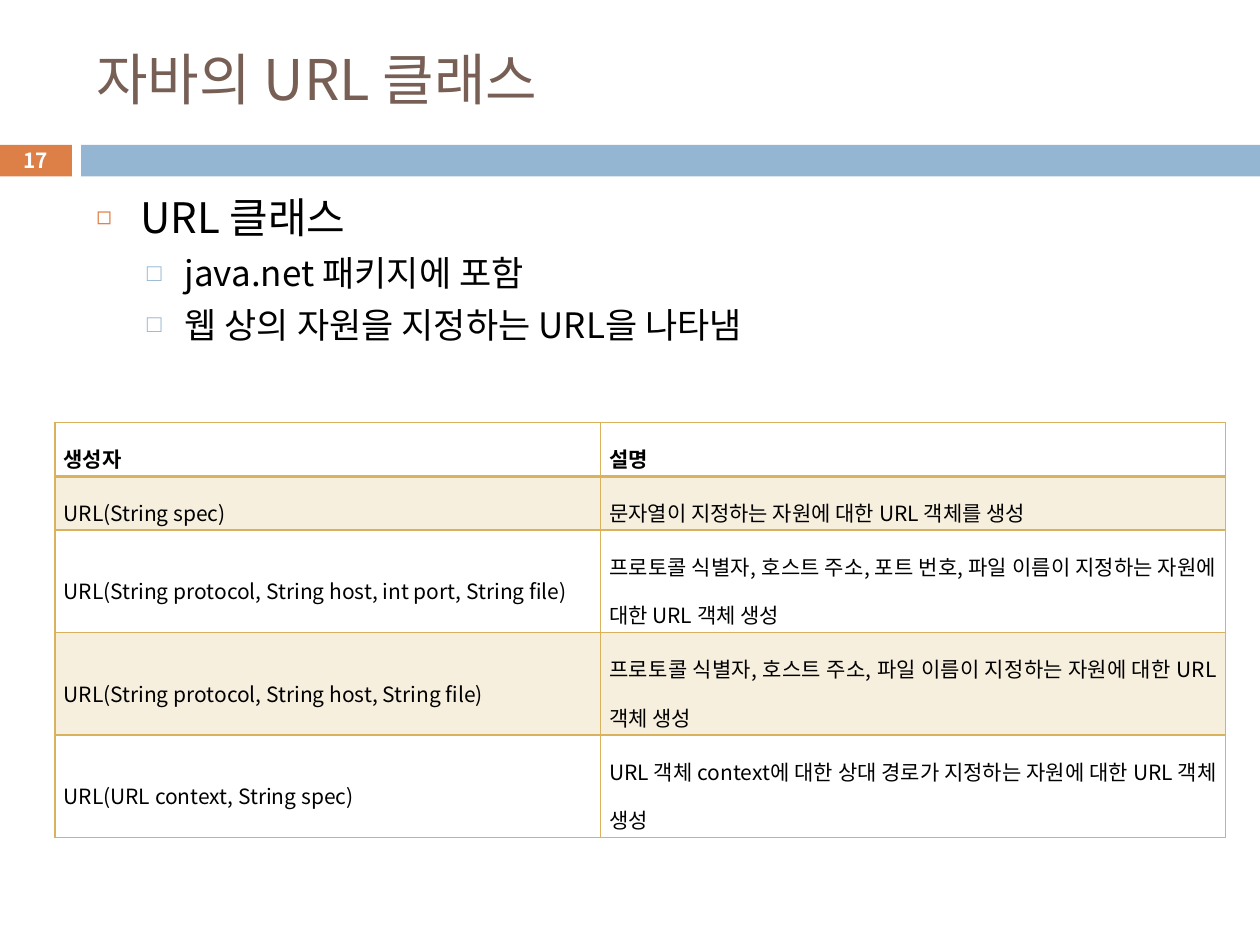
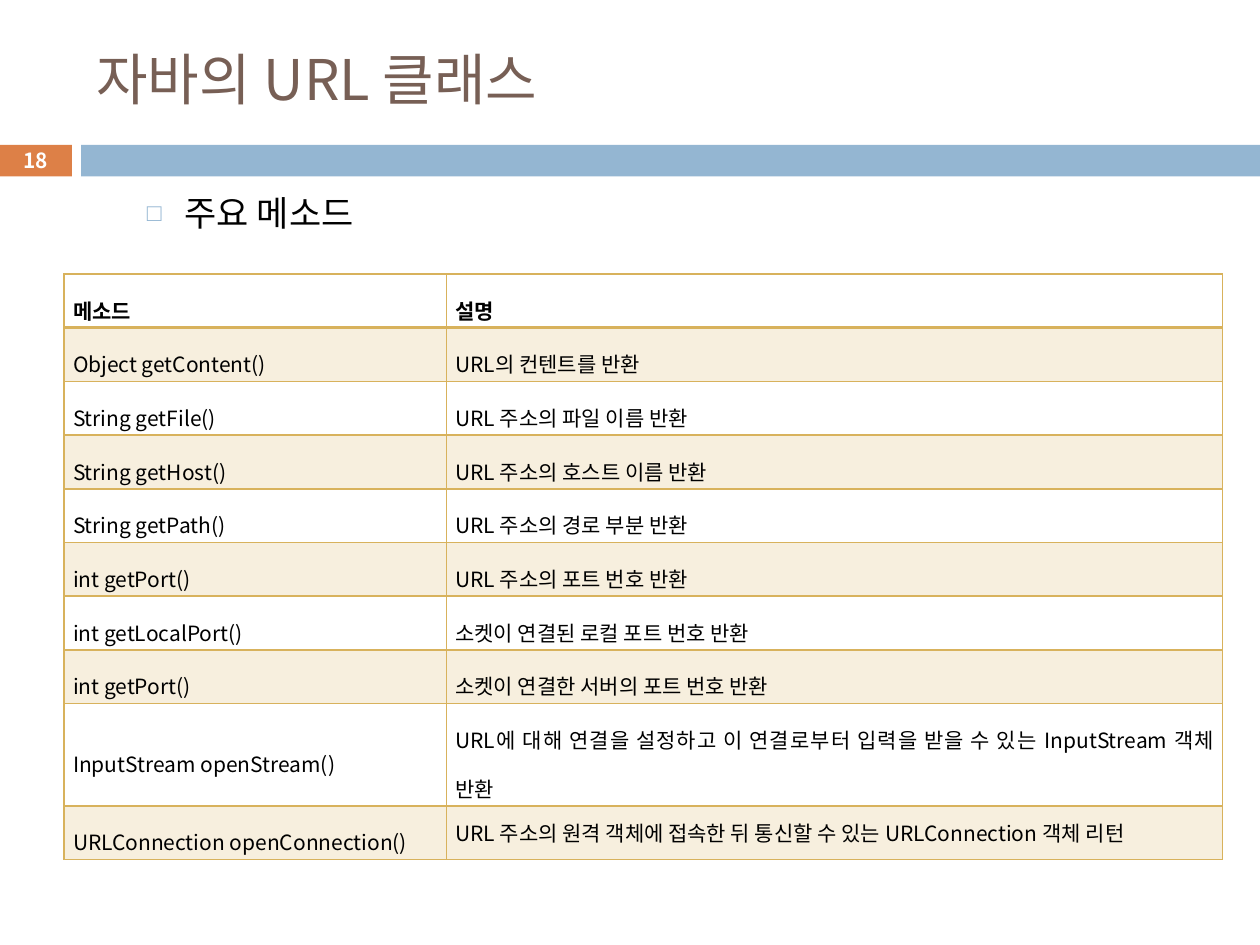
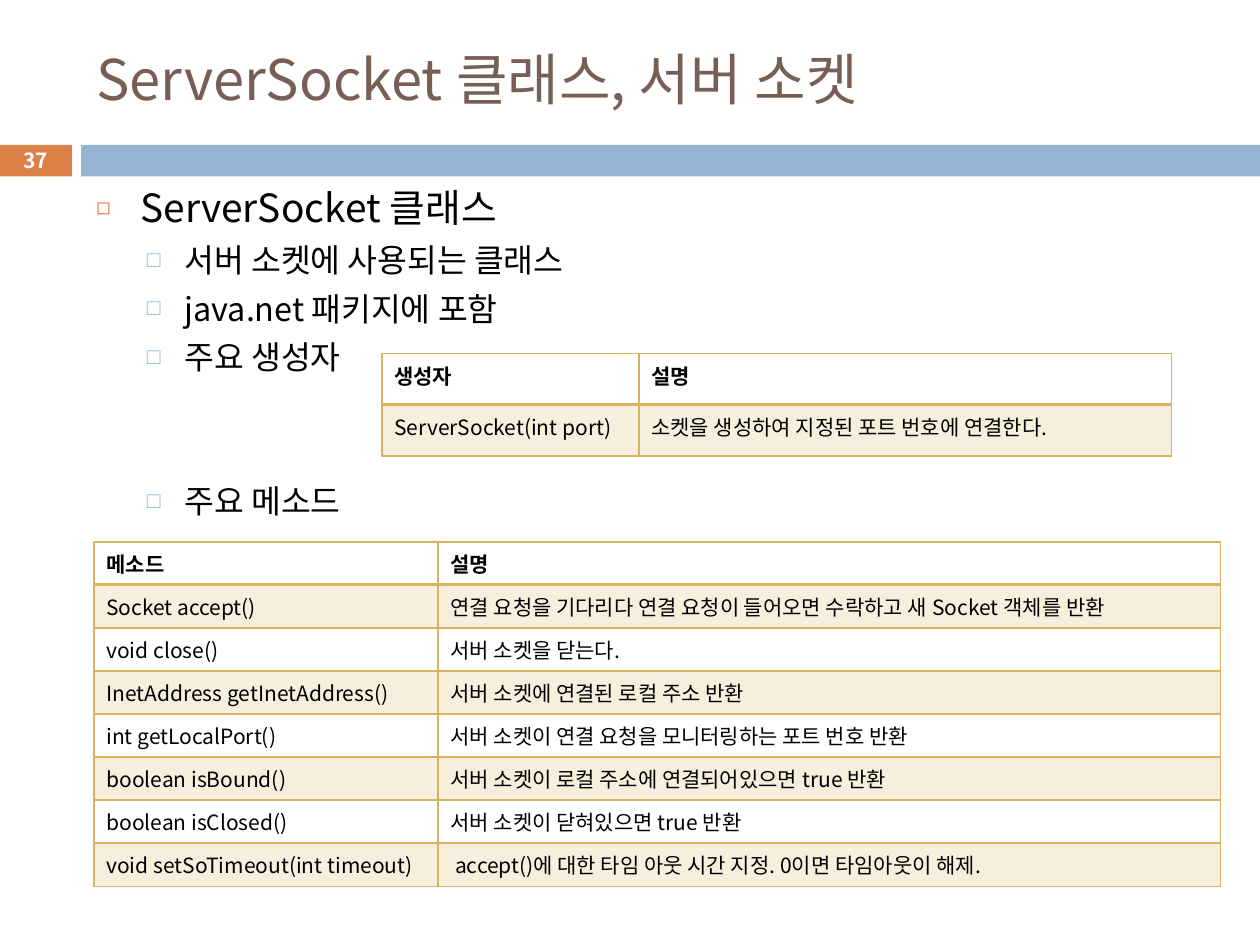
from lxml import etree
from pptx import Presentation
from pptx import util as u
from pptx.dml.color import RGBColor
from pptx.enum import shapes, text
from pptx.oxml.ns import qn

FONT = "Noto Sans CJK KR"
BROWN, ORANGE, BLUE, GOLD = "775F55", "DD8047", "94B6D2", "D8B25C"
BLACK, WHITE = "000000", "FFFFFF"
WIDTH, HEIGHT = u.Inches(10), u.Inches(7.5)
COLUMN, ROW = WIDTH / 100, HEIGHT / 75
ONE_LINE, TWO_LINES = 4.26, 8.13
BULLETS = [("◻", ORANGE, 60, 0.35, 0.35, 7), ("□", BLUE, 70, 0.7, 0.3, 5.5)]

URL_CONSTRUCTORS = [
    ("생성자", "설명"),
    ("URL(String spec)", "문자열이 지정하는 자원에 대한 URL 객체를 생성"),
    ("URL(String protocol, String host, int port, String file)",
     "프로토콜 식별자, 호스트 주소, 포트 번호, 파일 이름이 지정하는 자원에 대한 URL 객체 생성"),
    ("URL(String protocol, String host, String file)",
     "프로토콜 식별자, 호스트 주소, 파일 이름이 지정하는 자원에 대한 URL 객체 생성"),
    ("URL(URL context, String spec)",
     "URL 객체 context에 대한 상대 경로가 지정하는 자원에 대한 URL 객체 생성"),
]
URL_METHODS = [
    ("메소드", "설명"),
    ("Object getContent()", "URL의 컨텐트를 반환"),
    ("String getFile()", "URL 주소의 파일 이름 반환"),
    ("String getHost()", "URL 주소의 호스트 이름 반환"),
    ("String getPath()", "URL 주소의 경로 부분 반환"),
    ("int getPort()", "URL 주소의 포트 번호 반환"),
    ("int getLocalPort()", "소켓이 연결된 로컬 포트 번호 반환"),
    ("int getPort()", "소켓이 연결한 서버의 포트 번호 반환"),
    ("InputStream openStream()",
     "URL에 대해 연결을 설정하고 이 연결로부터 입력을 받을 수 있는 InputStream 객체 반환"),
    ("URLConnection openConnection()",
     "URL 주소의 원격 객체에 접속한 뒤 통신할 수 있는 URLConnection 객체 리턴"),
]
SERVER_CONSTRUCTORS = [
    ("생성자", "설명"),
    ("ServerSocket(int port)", "소켓을 생성하여 지정된 포트 번호에 연결한다."),
]
SERVER_METHODS = [
    ("메소드", "설명"),
    ("Socket accept()", "연결 요청을 기다리다 연결 요청이 들어오면 수락하고 새 Socket 객체를 반환"),
    ("void close()", "서버 소켓을 닫는다."),
    ("InetAddress getInetAddress()", "서버 소켓에 연결된 로컬 주소 반환"),
    ("int getLocalPort()", "서버 소켓이 연결 요청을 모니터링하는 포트 번호 반환"),
    ("boolean isBound()", "서버 소켓이 로컬 주소에 연결되어있으면 true 반환"),
    ("boolean isClosed()", "서버 소켓이 닫혀있으면 true 반환"),
    ("void setSoTimeout(int timeout)", " accept()에 대한 타임 아웃 시간 지정. 0이면 타임아웃이 해제."),
]


def color(value):
    return RGBColor.from_string(value)


def grid(left, top, width, height):
    return [round(n * unit) for n, unit in
            zip((left, top, width, height), (COLUMN, ROW, COLUMN, ROW))]


def element(parent, tag, **attributes):
    return etree.SubElement(parent, qn(tag), attributes)


def style(paragraph, size, shade, bold=False):
    for run in paragraph.runs:
        run.font.size, run.font.bold = u.Pt(size), bold
        run.font.color.rgb = color(shade)
        run.font.name = FONT
        run.font._element.set("kern", "0")
        latin = run.font._element.find(qn("a:latin"))
        latin.addnext(latin.makeelement(qn("a:ea"), {"typeface": FONT}))


def place(holder, area):
    holder.left, holder.top, holder.width, holder.height = grid(*area)


def add_band(slide, area, shade):
    band = slide.shapes.add_shape(shapes.MSO_SHAPE.RECTANGLE, *grid(*area))
    band.shadow.inherit = False
    band.fill.solid()
    band.fill.fore_color.rgb = color(shade)
    band.line.fill.background()


def add_page_number(slide, number):
    frame = slide.shapes.add_textbox(*grid(-0.1, 11.35, 5.8, 2.7)).text_frame
    frame.word_wrap = True
    frame.margin_top = frame.margin_bottom = 0
    frame.vertical_anchor = text.MSO_ANCHOR.MIDDLE
    frame.text = str(number)
    frame.paragraphs[0].alignment = text.PP_ALIGN.CENTER
    style(frame.paragraphs[0], 11.9, WHITE, True)


def start_slide(deck, heading, number):
    slide = deck.slides.add_slide(deck.slide_layouts[1])
    add_band(slide, (-0.1, 11.5, 5.8, 2.5), ORANGE)
    add_band(slide, (6.45, 11.5, 93.55, 2.5), BLUE)
    title = slide.shapes.title
    place(title, (6.65, 2.5, 89.2, 7.4))
    frame = title.text_frame
    frame.text = heading
    frame.vertical_anchor = text.MSO_ANCHOR.MIDDLE
    frame.paragraphs[0].alignment = text.PP_ALIGN.LEFT
    style(frame.paragraphs[0], 32, BROWN)
    add_page_number(slide, number)
    return slide


def fill_outline(slide, items, sizes=(24, 20), top=14.7, height=55.1):
    body = slide.placeholders[1]
    place(body, (6.65, top, 89.2, height))
    frame = body.text_frame
    frame.auto_size = text.MSO_AUTO_SIZE.NONE
    frame.text = "\n".join(words for _, words in items)
    for paragraph, (level, _) in zip(frame.paragraphs, items):
        mark, shade, percent, margin, hanging, before = BULLETS[level]
        paragraph.level = level
        paragraph.line_spacing = 1.0
        paragraph.space_before = u.Pt(before)
        style(paragraph, sizes[level], BLACK)
        properties = paragraph._p.get_or_add_pPr()
        properties.set("marL", str(u.Inches(margin)))
        properties.set("indent", str(-u.Inches(hanging)))
        element(element(properties, "a:buClr"), "a:srgbClr", val=shade)
        element(properties, "a:buSzPct", val=str(percent * 1000))
        element(properties, "a:buChar", char=mark)
    return frame.paragraphs


def border(cell, top, bottom):
    properties = cell._tc.get_or_add_tcPr()
    sides = [("L", 1), ("R", 1), ("T", top), ("B", bottom)]
    for position, (side, points) in enumerate(sides):
        line = element(properties, "a:ln" + side, w=str(u.Pt(points)))
        element(element(line, "a:solidFill"), "a:srgbClr", val=GOLD)
        properties.insert(position, line)


def shade_row(cell, banded):
    if not banded:
        cell.fill.background()
        return
    cell.fill.solid()
    cell.fill.fore_color.rgb = color(GOLD)
    tint = cell._tc.tcPr.find(".//" + qn("a:srgbClr"))
    element(tint, "a:alpha", val="20000")


def loosen(cell, centred):
    cell.margin_left = cell.margin_right = u.Inches(0.07)
    cell.margin_top = cell.margin_bottom = u.Inches(0.02)
    cell.vertical_anchor = text.MSO_ANCHOR.MIDDLE if centred else text.MSO_ANCHOR.TOP
    cell.text_frame.paragraphs[0].alignment = text.PP_ALIGN.JUSTIFY
    cell.text_frame.paragraphs[0].line_spacing = 1.6


def add_reference(slide, entries, left, top, widths, heights, loose=False):
    area = grid(left, top, sum(widths), sum(heights))
    table = slide.shapes.add_table(len(entries), 2, *area).table
    table.first_row = table.horz_banding = False
    for column, width in zip(table.columns, widths):
        column.width = round(width * COLUMN)
    for index, (entry, height) in enumerate(zip(entries, heights)):
        table.rows[index].height = round(height * ROW)
        for side, words in enumerate(entry):
            cell = table.cell(index, side)
            cell.text = words
            style(cell.text_frame.paragraphs[0], 12, BLACK, index == 0)
            if loose:
                loosen(cell, side == 0 and height == TWO_LINES)
            shade_row(cell, index % 2 == 1)
            border(cell, 2 if index == 1 else 1, 2 if index == 0 else 1)
    return table


def main():
    deck = Presentation()
    deck.slide_width, deck.slide_height = WIDTH, HEIGHT

    slide = start_slide(deck, "자바의 URL 클래스", 17)
    fill_outline(slide, [(0, "URL 클래스"), (1, "java.net 패키지에 포함"),
                         (1, "웹 상의 자원을 지정하는 URL을 나타냄")])
    add_reference(slide, URL_CONSTRUCTORS, 4.35, 33.55, (43.3, 49.6),
                  [ONE_LINE] * 2 + [TWO_LINES] * 3, loose=True)

    slide = start_slide(deck, "자바의 URL 클래스", 18)
    fill_outline(slide, [(1, "주요 메소드")])
    methods = add_reference(slide, URL_METHODS, 5.1, 21.75, (30.35, 61.6),
                            [ONE_LINE] * 8 + [TWO_LINES, ONE_LINE], loose=True)
    connection = methods.cell(len(URL_METHODS) - 1, 1)
    connection.vertical_anchor = text.MSO_ANCHOR.MIDDLE
    connection.text_frame.paragraphs[0].alignment = text.PP_ALIGN.LEFT
    connection.text_frame.paragraphs[0].line_spacing = 1.0

    slide = start_slide(deck, "ServerSocket 클래스, 서버 소켓", 37)
    outline = fill_outline(
        slide, [(0, "ServerSocket 클래스"), (1, "서버 소켓에 사용되는 클래스"),
                (1, "java.net 패키지에 포함"), (1, "주요 생성자"), (1, "주요 메소드")],
        sizes=(22.2, 18.5), top=14.1, height=28.1)
    outline[-1].space_before = u.Pt(60)
    add_reference(slide, SERVER_CONSTRUCTORS, 30.3, 28.05, (20.4, 42.3), (4.08, 4.08))
    add_reference(slide, SERVER_METHODS, 7.45, 43, (27.3, 62.1),
                  [3.42] * len(SERVER_METHODS))

    deck.save("out.pptx")


if __name__ == "__main__":
    main()
